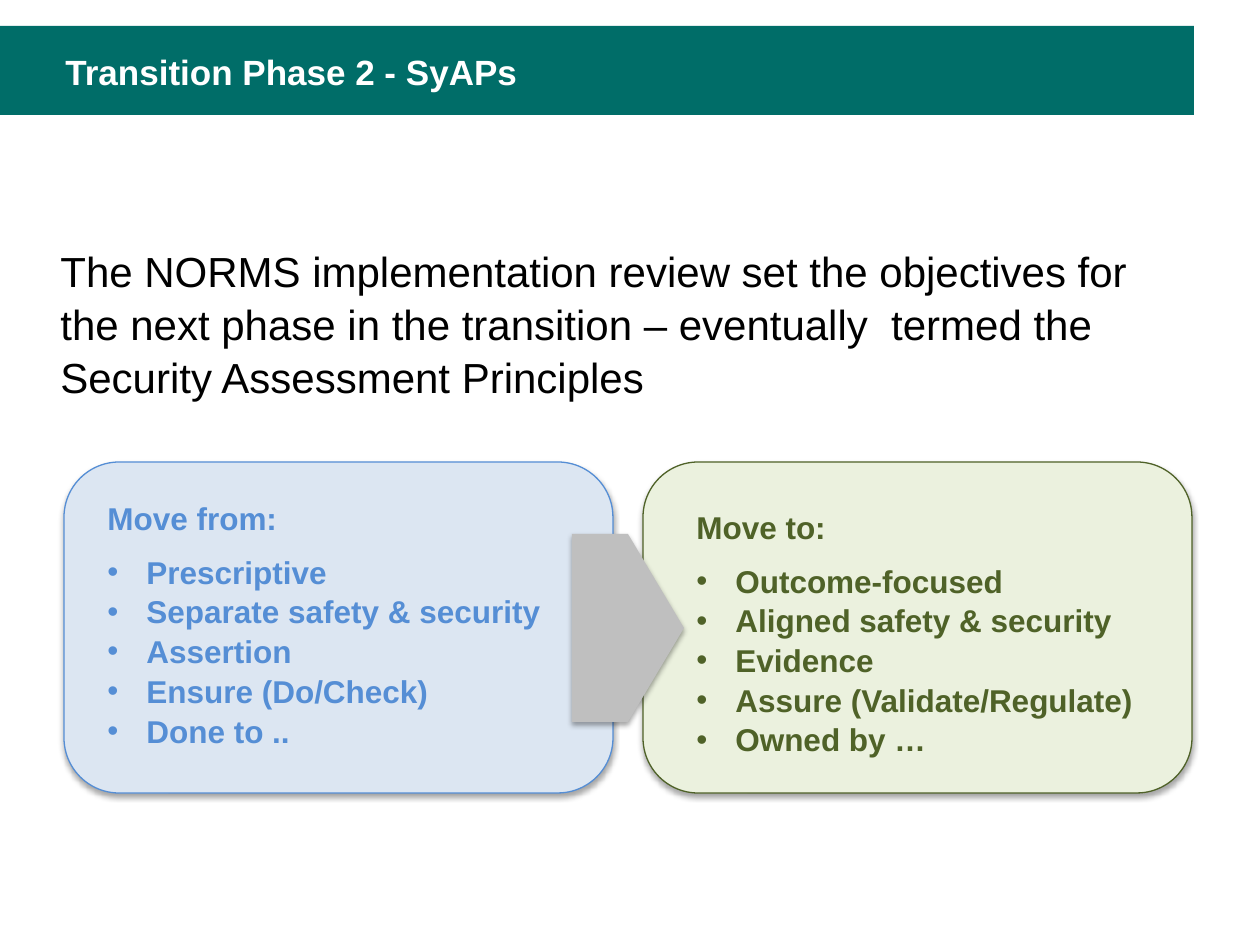
from lxml import etree
from pptx import Presentation, util as u
from pptx.dml.color import RGBColor
from pptx.enum import shapes, text
from pptx.oxml import ns

SCALE = 914400 / 126  # EMU per px
COLORS = {
    "teal": "006D68", "white": "FFFFFF", "black": "000000", "grey": "BFBFBF",
    "blue": "558ED5", "pale_blue": "DCE6F2",
    "green": "4F6228", "pale_green": "EBF1DE",
}

deck = Presentation()
deck.slide_width, deck.slide_height = u.Inches(10), u.Inches(7.5)
page = deck.slides.add_slide(deck.slide_layouts[6])


def add_block(kind, area, fill, line=None, shadow=True):
    block = page.shapes.add_shape(kind, *[round(v * SCALE) for v in area])
    block.shadow.inherit = False
    block.fill.solid()
    block.fill.fore_color.rgb = RGBColor.from_string(COLORS[fill])
    if line:
        block.line.color.rgb = RGBColor.from_string(COLORS[line])
        block.line.width = u.Pt(0.75)
    else:
        block.line.fill.background()
    if shadow:
        effects = block._element.spPr.find(ns.qn("a:effectLst"))
        outer = etree.SubElement(
            effects, ns.qn("a:outerShdw"), blurRad=str(u.Pt(3.1)),
            dist=str(u.Pt(1.8)), dir="5400000", rotWithShape="0")
        color = etree.SubElement(outer, ns.qn("a:srgbClr"), val=COLORS["black"])
        etree.SubElement(color, ns.qn("a:alpha"), val="35000")


def add_text(heading, area, size, color, bold=True, wrap=True, bullets=()):
    box = page.shapes.add_textbox(*[round(v * SCALE) for v in area])
    frame = box.text_frame
    frame.word_wrap = wrap
    frame.auto_size = text.MSO_AUTO_SIZE.SHAPE_TO_FIT_TEXT
    for index, words in enumerate([heading, *bullets]):
        para = frame.add_paragraph() if index else frame.paragraphs[0]
        para.line_spacing = 1.05
        if index:
            props = para._p.get_or_add_pPr()
            props.set("marL", str(round(39 * SCALE)))
            props.set("indent", str(round(-39 * SCALE)))
            etree.SubElement(props, ns.qn("a:buFont"), typeface="Arial")
            etree.SubElement(props, ns.qn("a:buChar"), char="•")
        elif bullets:
            para.space_after = u.Pt(8)
        span = para.add_run()
        span.text = words
        span.font.name = "Arial"
        span.font.size = u.Pt(size)
        span.font.bold = bold
        span.font.color.rgb = RGBColor.from_string(COLORS[color])


# Title band
add_block(shapes.MSO_SHAPE.RECTANGLE, (0, 26, 1194, 89), "teal", shadow=False)
add_text("Transition Phase 2 - SyAPs", (53, 42, 1120, 55), 20, "white")

# Introduction
add_text("The NORMS implementation review set the objectives for the next phase "
         "in the transition – eventually  termed the Security Assessment Principles",
         (48, 237, 1123, 165), 24, "black", bold=False)

# From and to panels
panels = [
    (64, "pale_blue", "blue", "Move from:", (95, 491, 462, 256),
     ["Prescriptive", "Separate safety & security", "Assertion",
      "Ensure (Do/Check)", "Done to .."]),
    (643, "pale_green", "green", "Move to:", (684, 500, 466, 256),
     ["Outcome-focused", "Aligned safety & security", "Evidence",
      "Assure (Validate/Regulate)", "Owned by …"]),
]
for left, fill, color, heading, area, bullets in panels:
    add_block(shapes.MSO_SHAPE.ROUNDED_RECTANGLE, (left, 462, 549, 331), fill, color)
    add_text(heading, area, 18, color, wrap=False, bullets=bullets)

# Arrow between the panels
add_block(shapes.MSO_SHAPE.PENTAGON, (572, 534, 112, 188), "grey")

deck.save("out.pptx")
